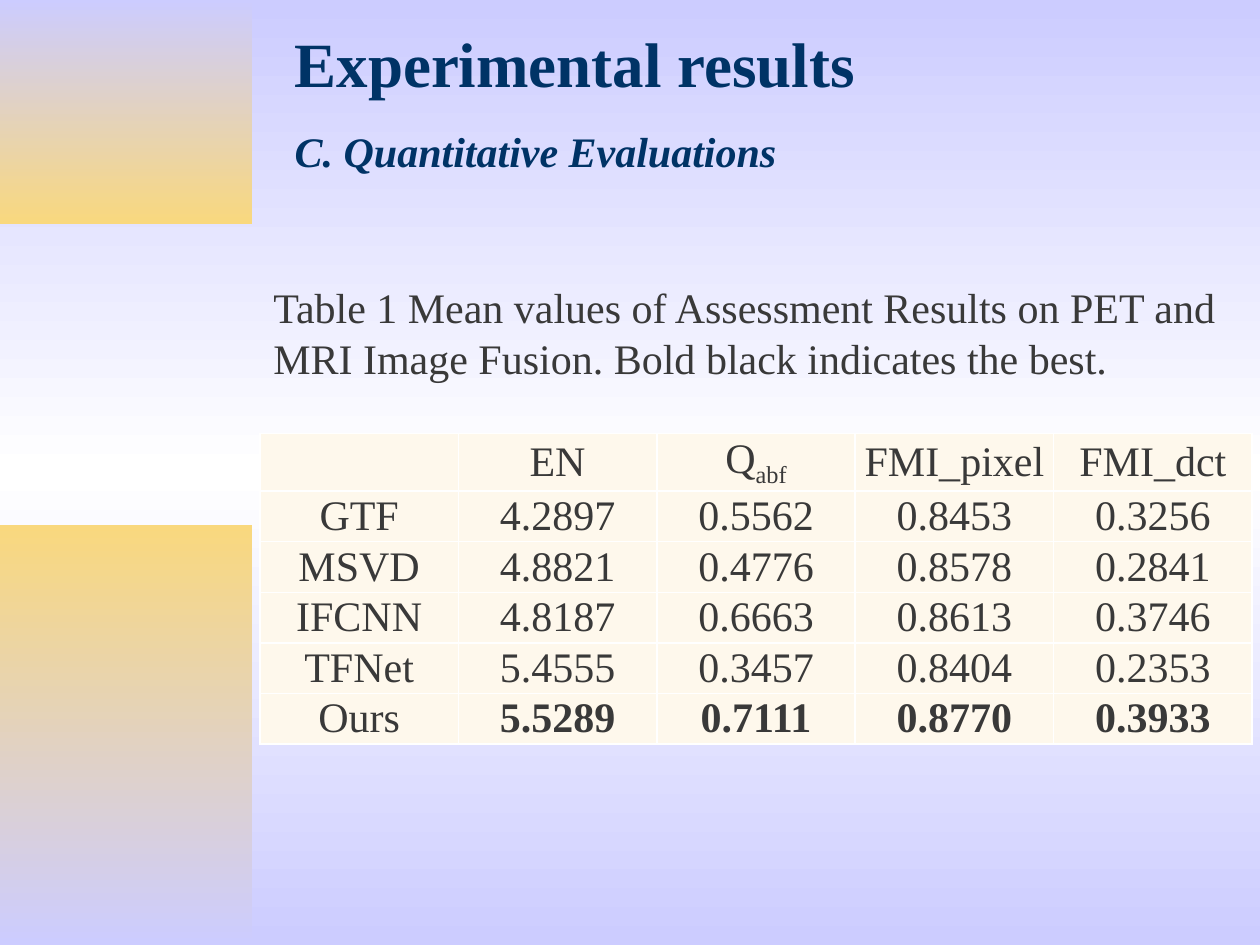
import copy
from dataclasses import dataclass

import lxml.etree
import pptx
import pptx.dml.color
import pptx.enum.shapes
import pptx.enum.text
import pptx.oxml.ns
import pptx.util

Cm = pptx.util.Cm
Pt = pptx.util.Pt
MIDDLE = pptx.enum.text.MSO_ANCHOR.MIDDLE
FONT = "Times New Roman"
HUES = {
    "lilac": "CCCCFF",
    "white": "FFFFFF",
    "gold": "F9D87E",
    "navy": "003366",
    "gray": "393939",
    "cream": "FEF8EC",
}


@dataclass
class Panel:
    """A gradient block at the left edge."""

    top: float
    height: float
    hues: tuple[str, ...]


@dataclass
class Run:
    """A piece of text in one style."""

    text: str
    size: int = 24
    hue: str = "gray"
    bold: bool = False
    slant: bool = False
    base: int = 0


PANELS = [
    Panel(0, 4.52, ("lilac", "gold")),
    Panel(10.58, 8.47, ("gold", "lilac")),
]
TITLE = [
    Run("Experimental results", 36, "navy", True),
    Run("C. Quantitative Evaluations", 24, "navy", True, True),
]
NOTE = Run(
    "Table 1 Mean values of Assessment Results on PET and "
    "MRI Image Fusion. Bold black indicates the best."
)
HEADS = [
    [],
    [Run("EN")],
    [Run("Q"), Run("abf", base=-25000)],
    [Run("FMI_pixel")],
    [Run("FMI_dct")],
]
SCORES = {
    "GTF": ("4.2897", "0.5562", "0.8453", "0.3256"),
    "MSVD": ("4.8821", "0.4776", "0.8578", "0.2841"),
    "IFCNN": ("4.8187", "0.6663", "0.8613", "0.3746"),
    "TFNet": ("5.4555", "0.3457", "0.8404", "0.2353"),
    "Ours": ("5.5289", "0.7111", "0.8770", "0.3933"),
}
BEST = "Ours"


def tint(name: str) -> pptx.dml.color.RGBColor:
    """Return the named colour."""
    return pptx.dml.color.RGBColor.from_string(HUES[name])


def blend(fill, hues: tuple[str, ...]) -> None:
    """Fill from top to bottom with evenly spaced colours."""
    fill.gradient()
    fill.gradient_angle = 270
    first = fill.gradient_stops[0]._gs
    for _ in hues[2:]:
        first.addnext(copy.deepcopy(first))
    for i, (stop, hue) in enumerate(zip(fill.gradient_stops, hues)):
        stop.color.rgb = tint(hue)
        stop.position = i / (len(hues) - 1)


def add_panel(slide, panel: Panel) -> None:
    """Draw one gradient block."""
    shape = slide.shapes.add_shape(
        pptx.enum.shapes.MSO_SHAPE.RECTANGLE,
        0, Cm(panel.top), Cm(5.08), Cm(panel.height),
    )
    shape.shadow.inherit = False
    shape.line.fill.background()
    blend(shape.fill, panel.hues)


def add_run(para, item: Run) -> None:
    """Append one styled run."""
    run = para.add_run()
    run.text = item.text
    font = run.font
    font.name, font.size = FONT, Pt(item.size)
    font.bold, font.italic = item.bold, item.slant
    font.color.rgb = tint(item.hue)
    if item.base:
        font._element.set("baseline", str(item.base))


def add_text(slide, left: float, top: float, width: float, height: float,
             lines: list[Run], space: float = 1.0) -> None:
    """Draw a paragraph with a line break between runs."""
    box = slide.shapes.add_textbox(Cm(left), Cm(top), Cm(width), Cm(height))
    frame = box.text_frame
    frame.word_wrap = True
    frame.vertical_anchor = MIDDLE
    para = frame.paragraphs[0]
    para.line_spacing = space
    for i, line in enumerate(lines):
        if i:
            para.add_line_break()
        add_run(para, line)


def add_edge(cell) -> None:
    """Give a cell thin white borders."""
    props = cell._tc.get_or_add_tcPr()
    qn = pptx.oxml.ns.qn
    for side in ("a:lnL", "a:lnR", "a:lnT", "a:lnB"):
        line = lxml.etree.SubElement(props, qn(side), w=str(Pt(1)))
        solid = lxml.etree.SubElement(line, qn("a:solidFill"))
        lxml.etree.SubElement(solid, qn("a:srgbClr"), val=HUES["white"])


def fill_cell(cell, runs: list[Run]) -> None:
    """Style one cell and write its text."""
    add_edge(cell)
    cell.fill.solid()
    cell.fill.fore_color.rgb = tint("cream")
    cell.vertical_anchor = MIDDLE
    cell.margin_left = cell.margin_right = Cm(0.18)
    cell.margin_top = cell.margin_bottom = 0
    para = cell.text_frame.paragraphs[0]
    para.alignment = pptx.enum.text.PP_ALIGN.CENTER
    for run in runs:
        add_run(para, run)


def add_grid(slide) -> None:
    """Draw the table of scores."""
    rows = [HEADS] + [
        [[Run(name)]] + [[Run(score, bold=name == BEST)] for score in scores]
        for name, scores in SCORES.items()
    ]
    head, body, wide = 1.16, 1.02, 4
    table = slide.shapes.add_table(
        len(rows), len(HEADS), Cm(5.24), Cm(8.74),
        Cm(wide * len(HEADS)), Cm(head + body * len(SCORES)),
    ).table
    table.first_row = table.horz_banding = False
    for col in table.columns:
        col.width = Cm(wide)
    for i, row in enumerate(rows):
        table.rows[i].height = Cm(body if i else head)
        for j, runs in enumerate(row):
            fill_cell(table.cell(i, j), runs)


def main() -> None:
    """Build and save the slide."""
    deck = pptx.Presentation()
    deck.slide_width, deck.slide_height = Cm(25.4), Cm(19.05)
    slide = deck.slides.add_slide(deck.slide_layouts[6])
    blend(slide.background.fill, ("lilac", "white", "lilac"))
    for panel in PANELS:
        add_panel(slide, panel)
    add_text(slide, 5.69, 0.53, 19.08, 2.21, TITLE, 1.5)
    add_text(slide, 5.26, 5.54, 20.09, 2.31, [NOTE])
    add_grid(slide)
    deck.save("out.pptx")


if __name__ == "__main__":
    main()
